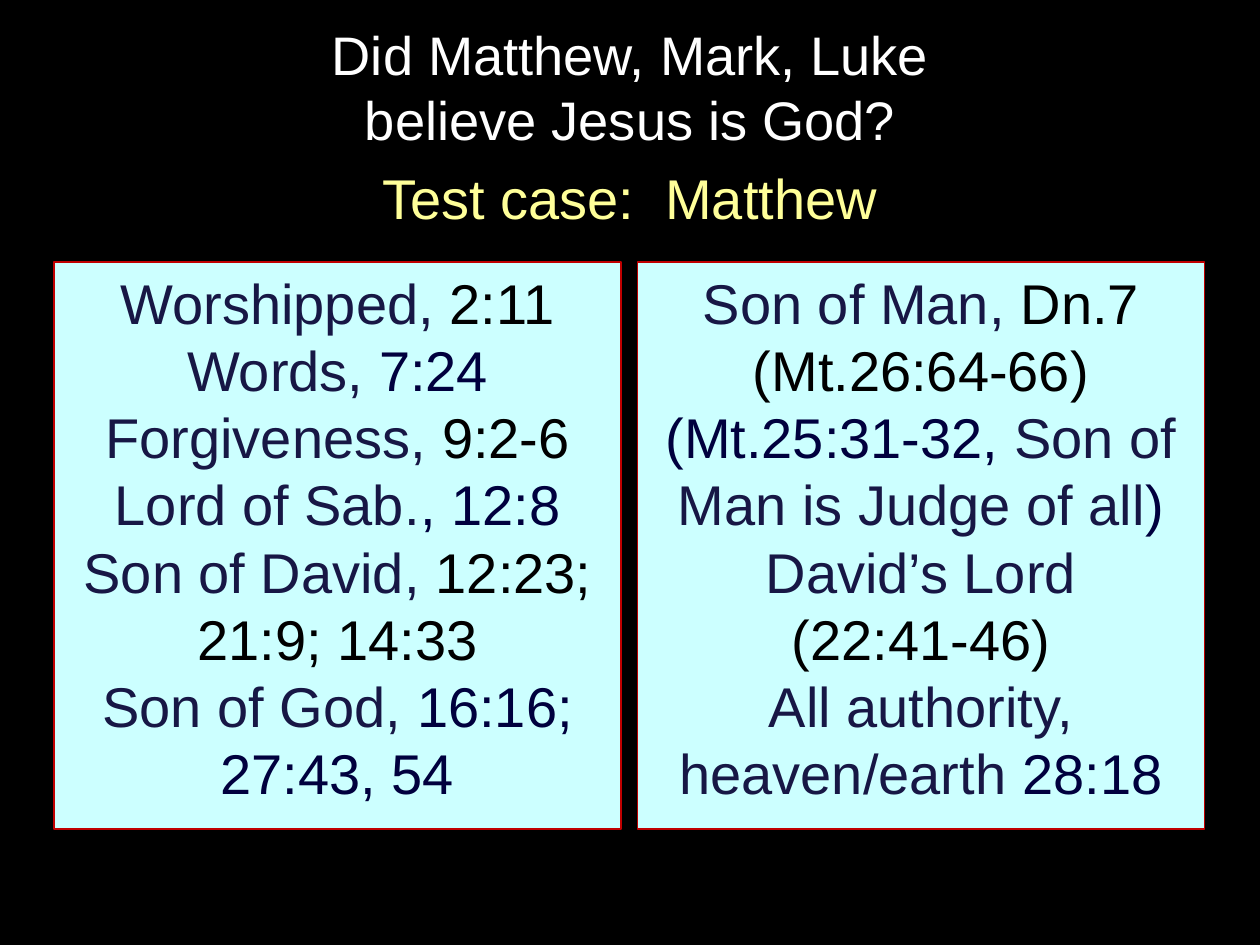
from dataclasses import dataclass

from pptx import Presentation
from pptx.dml.color import RGBColor
from pptx.enum.shapes import MSO_SHAPE
from pptx.enum.text import MSO_ANCHOR, PP_ALIGN
from pptx.slide import Slide
from pptx.text.text import TextFrame
from pptx.util import Inches, Pt

BLACK = "000000"
WHITE = "FFFFFF"
YELLOW = "FFFF99"
CYAN = "CCFFFF"
RED = "C00000"
INDIGO = "171745"
NAVY = "00003E"


@dataclass
class Span:
    text: str
    color: str


@dataclass
class Panel:
    left: float
    lines: list[list[Span]]


PANELS = [
    Panel(0.43, [
        [Span("Worshipped,", INDIGO), Span(" 2:11", BLACK)],
        [Span("Words,", INDIGO), Span(" 7:24", NAVY)],
        [Span("Forgiveness, ", INDIGO), Span("9:2-6", BLACK)],
        [Span("Lord of Sab.", INDIGO), Span(", 12:8", NAVY)],
        [Span("Son of David, ", INDIGO), Span("12:23; 21:9; 14:33", BLACK)],
        [Span("Son of God, ", INDIGO), Span("16:16; 27:43, 54", NAVY)],
    ]),
    Panel(5.06, [
        [Span("Son of Man, ", INDIGO), Span("Dn.7 (Mt.26:64-66)", BLACK)],
        [Span("(Mt.25:31-32, ", NAVY), Span("Son of Man is Judge of all", INDIGO), Span(")", NAVY)],
        [Span("David’s Lord\n", INDIGO), Span("(22:41-46)", BLACK)],
        [Span("All authority, heaven/earth ", INDIGO), Span("28:18", NAVY)],
    ]),
]


def rgb(value: str) -> RGBColor:
    return RGBColor.from_string(value)


def write_lines(frame: TextFrame, lines: list[list[Span]], size: float) -> None:
    frame.word_wrap = True
    for index, line in enumerate(lines):
        para = frame.add_paragraph() if index else frame.paragraphs[0]
        para.alignment = PP_ALIGN.CENTER
        para.font.name = "Arial"
        para.font.size = Pt(size)
        for span in line:
            for part, text in enumerate(span.text.split("\n")):
                if part:
                    para.add_line_break()
                if text:
                    run = para.add_run()
                    run.text = text
                    run.font.color.rgb = rgb(span.color)


def draw_panel(page: Slide, panel: Panel) -> None:
    box = page.shapes.add_shape(
        MSO_SHAPE.RECTANGLE, Inches(panel.left), Inches(2.08), Inches(4.5), Inches(4.5)
    )
    box.shadow.inherit = False
    box.fill.solid()
    box.fill.fore_color.rgb = rgb(CYAN)
    box.line.color.rgb = rgb(RED)
    box.line.width = Pt(0.75)
    box.text_frame.vertical_anchor = MSO_ANCHOR.TOP
    write_lines(box.text_frame, panel.lines, 32)


def main() -> None:
    deck = Presentation()
    deck.slide_width, deck.slide_height = Inches(10), Inches(7.5)
    page = deck.slides.add_slide(deck.slide_layouts.get_by_name("Title Only"))
    page.background.fill.solid()
    page.background.fill.fore_color.rgb = rgb(BLACK)

    title = page.shapes.title
    title.left, title.top = Inches(0.5), Inches(0.17)
    title.width, title.height = Inches(9), Inches(1.03)
    title.text_frame.vertical_anchor = MSO_ANCHOR.MIDDLE
    write_lines(
        title.text_frame, [[Span("Did Matthew, Mark, Luke\nbelieve Jesus is God?", WHITE)]], 31
    )

    subtitle = page.shapes.add_textbox(Inches(0.5), Inches(1.25), Inches(9), Inches(5.67))
    write_lines(subtitle.text_frame, [[Span("Test case:  Matthew", YELLOW)]], 32)

    for panel in PANELS:
        draw_panel(page, panel)

    deck.save("out.pptx")


if __name__ == "__main__":
    main()
